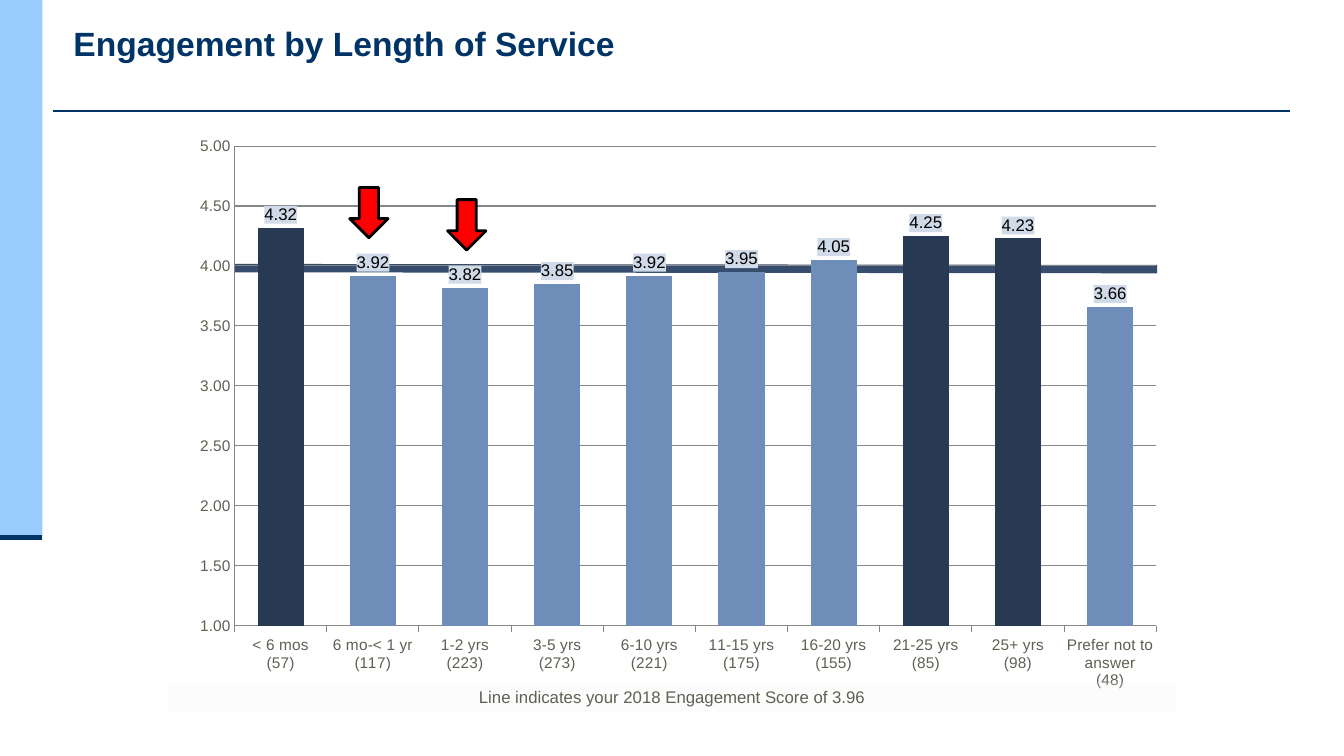
"""Build the slide that charts engagement by length of service."""
from dataclasses import dataclass

from lxml import etree
from pptx import Presentation
from pptx.chart.data import CategoryChartData
from pptx.dml.color import RGBColor
from pptx.enum.chart import XL_CHART_TYPE, XL_LABEL_POSITION, XL_TICK_LABEL_POSITION, XL_TICK_MARK
from pptx.enum.shapes import MSO_CONNECTOR, MSO_SHAPE
from pptx.enum.text import MSO_ANCHOR, PP_ALIGN
from pptx.oxml import parse_xml
from pptx.oxml.ns import nsdecls, qn
from pptx.util import Pt

COLUMNS = XL_CHART_TYPE.COLUMN_CLUSTERED
OUTSIDE_END = XL_LABEL_POSITION.OUTSIDE_END
LABELS_LOW = XL_TICK_LABEL_POSITION.LOW
TICK_NONE, TICK_OUT = XL_TICK_MARK.NONE, XL_TICK_MARK.OUTSIDE
STRAIGHT = MSO_CONNECTOR.STRAIGHT
RECTANGLE, DOWN_ARROW = MSO_SHAPE.RECTANGLE, MSO_SHAPE.DOWN_ARROW
TOP, MIDDLE = MSO_ANCHOR.TOP, MSO_ANCHOR.MIDDLE
LEFT, CENTER = PP_ALIGN.LEFT, PP_ALIGN.CENTER

FONT = "Arial"
NUMBER_FORMAT = "#,##0.00"
COLORS = {
    "navy": "003366", "sky": "99CCFF", "score": "364D6E", "bar": "6F8DB9",
    "high": "283A53", "label": "D0DAE8", "muted": "5E6052", "grid": "868686",
    "note": "F2F2F2", "red": "FF0000", "black": "000000",
}
PLOT_LAYOUT = {"x": 0.057, "y": 0.069, "w": 0.933, "h": 0.784}


@dataclass(frozen=True)
class Rule:
    start: tuple[float, float]
    end: tuple[float, float]
    color: str
    width: float


@dataclass(frozen=True)
class Block:
    kind: int
    box: tuple[float, float, float, float]
    fill: str
    outline: str = ""


@dataclass(frozen=True)
class Service:
    name: str
    count: int
    score: float
    high: bool = False


SIDE_BAND = Block(RECTANGLE, (0, 0, 30.24, 384), "sky")
NOTE_BAND = Block(RECTANGLE, (120.2, 486.7, 720, 21.6), "note")
ARROWS = [Block(DOWN_ARROW, (left, top, 27.4, 36), "red", "black")
          for left, top in ((249.8, 133.9), (319.7, 142.6))]
RULES = [
    Rule((0, 384), (30.24, 384), "navy", 3.5),
    Rule((38.16, 79.2), (921.6, 79.2), "navy", 1.5),
    Rule((167.76, 191.52), (826.56, 192.24), "score", 6),
]
SERVICES = [
    Service("< 6 mos", 57, 4.32, True),
    Service("6 mo-< 1 yr", 117, 3.92),
    Service("1-2 yrs", 223, 3.82),
    Service("3-5 yrs", 273, 3.85),
    Service("6-10 yrs", 221, 3.92),
    Service("11-15 yrs", 175, 3.95),
    Service("16-20 yrs", 155, 4.05),
    Service("21-25 yrs", 85, 4.25, True),
    Service("25+ yrs", 98, 4.23, True),
    Service("Prefer not to answer", 48, 3.66),
]


def paint(fill, color: str) -> None:
    fill.solid()
    fill.fore_color.rgb = RGBColor.from_string(COLORS[color])


def style_font(font, size: float, color: str, bold: bool = False) -> None:
    font.name, font.size, font.bold = FONT, Pt(size), bold
    font.color.rgb = RGBColor.from_string(COLORS[color])


def draw_rule(slide, rule: Rule) -> None:
    connector = slide.shapes.add_connector(STRAIGHT, *map(Pt, rule.start + rule.end))
    connector.line.width = Pt(rule.width)
    paint(connector.line.fill, rule.color)
    etree.SubElement(connector.element.spPr, qn("a:effectLst"))


def draw_block(slide, block: Block):
    shape = slide.shapes.add_shape(block.kind, *map(Pt, block.box))
    shape.shadow.inherit = False
    paint(shape.fill, block.fill)
    if block.outline:
        paint(shape.line.fill, block.outline)
        shape.line.width = Pt(2)
    else:
        shape.line.fill.background()
    return shape


def write_text(shape, text: str, size: float, color: str, align, anchor, bold: bool = False) -> None:
    frame = shape.text_frame
    frame.word_wrap, frame.vertical_anchor = True, anchor
    paragraph = frame.paragraphs[0]
    paragraph.alignment = align
    run = paragraph.add_run()
    run.text = text
    style_font(run.font, size, color, bold)


def style_axes(chart) -> None:
    categories, values = chart.category_axis, chart.value_axis
    for axis, tick in ((categories, TICK_OUT), (values, TICK_NONE)):
        axis.major_tick_mark, axis.minor_tick_mark = tick, TICK_NONE
        style_font(axis.tick_labels.font, 11, "muted")
        paint(axis.format.line.fill, "grid")
    categories.tick_label_position = LABELS_LOW
    values.minimum_scale, values.maximum_scale, values.major_unit = 1, 5, 0.5
    values.tick_labels.number_format = NUMBER_FORMAT
    values.tick_labels.number_format_is_linked = False
    values.has_major_gridlines = True
    paint(values.major_gridlines.format.line.fill, "grid")


def style_labels(chart, series) -> None:
    labels = series.data_labels
    labels.show_value = True
    labels.number_format, labels.number_format_is_linked = NUMBER_FORMAT, False
    labels.position = OUTSIDE_END
    style_font(labels.font, 12, "black")
    chart.element.xpath(".//c:ser/c:dLbls/c:txPr")[0].addprevious(parse_xml(
        f'<c:spPr {nsdecls("c", "a")}><a:solidFill><a:srgbClr val="{COLORS["label"]}"/>'
        "</a:solidFill></c:spPr>"))


def place_plot(chart) -> None:
    plot_area = chart.element.xpath(".//c:plotArea")[0]
    for layout in plot_area.findall(qn("c:layout")):
        plot_area.remove(layout)
    modes = "".join(f'<c:{side}Mode val="edge"/>' for side in "xy")
    sizes = "".join(f'<c:{key} val="{value}"/>' for key, value in PLOT_LAYOUT.items())
    plot_area.insert(0, parse_xml(
        f'<c:layout {nsdecls("c")}><c:manualLayout><c:layoutTarget val="inner"/>'
        f"{modes}{sizes}</c:manualLayout></c:layout>"))


def draw_chart(slide) -> None:
    data = CategoryChartData(number_format=NUMBER_FORMAT)
    data.categories = [f"{service.name}\n({service.count})" for service in SERVICES]
    data.add_series("Series 1", [service.score for service in SERVICES])
    chart = slide.shapes.add_chart(COLUMNS, *map(Pt, (127.4, 74.2, 705.6, 437)), data).chart
    chart.has_title = chart.has_legend = False
    style_font(chart.font, 18, "black")
    plot = chart.plots[0]
    plot.gap_width, plot.vary_by_categories = 100, False
    series = plot.series[0]
    paint(series.format.fill, "bar")
    for index, service in enumerate(SERVICES):
        if service.high:
            paint(series.points[index].format.fill, "high")
    style_axes(chart)
    style_labels(chart, series)
    place_plot(chart)


def main() -> None:
    presentation = Presentation()
    presentation.slide_width, presentation.slide_height = Pt(960), Pt(540)
    slide = presentation.slides.add_slide(presentation.slide_layouts[6])
    draw_block(slide, SIDE_BAND)
    for rule in RULES:
        draw_rule(slide, rule)
    title = slide.shapes.add_textbox(*map(Pt, (45.4, 13, 868.3, 65.5)))
    write_text(title, "Engagement by Length of Service", 24, "navy", LEFT, TOP, bold=True)
    draw_chart(slide)
    note = draw_block(slide, NOTE_BAND)
    note_color = note.element.spPr.find(".//" + qn("a:srgbClr"))
    etree.SubElement(note_color, qn("a:alpha"), val="20000")
    write_text(note, "Line indicates your 2018 Engagement Score of 3.96", 12, "muted", CENTER, MIDDLE)
    for arrow in ARROWS:
        draw_block(slide, arrow)
    presentation.save("out.pptx")


if __name__ == "__main__":
    main()
